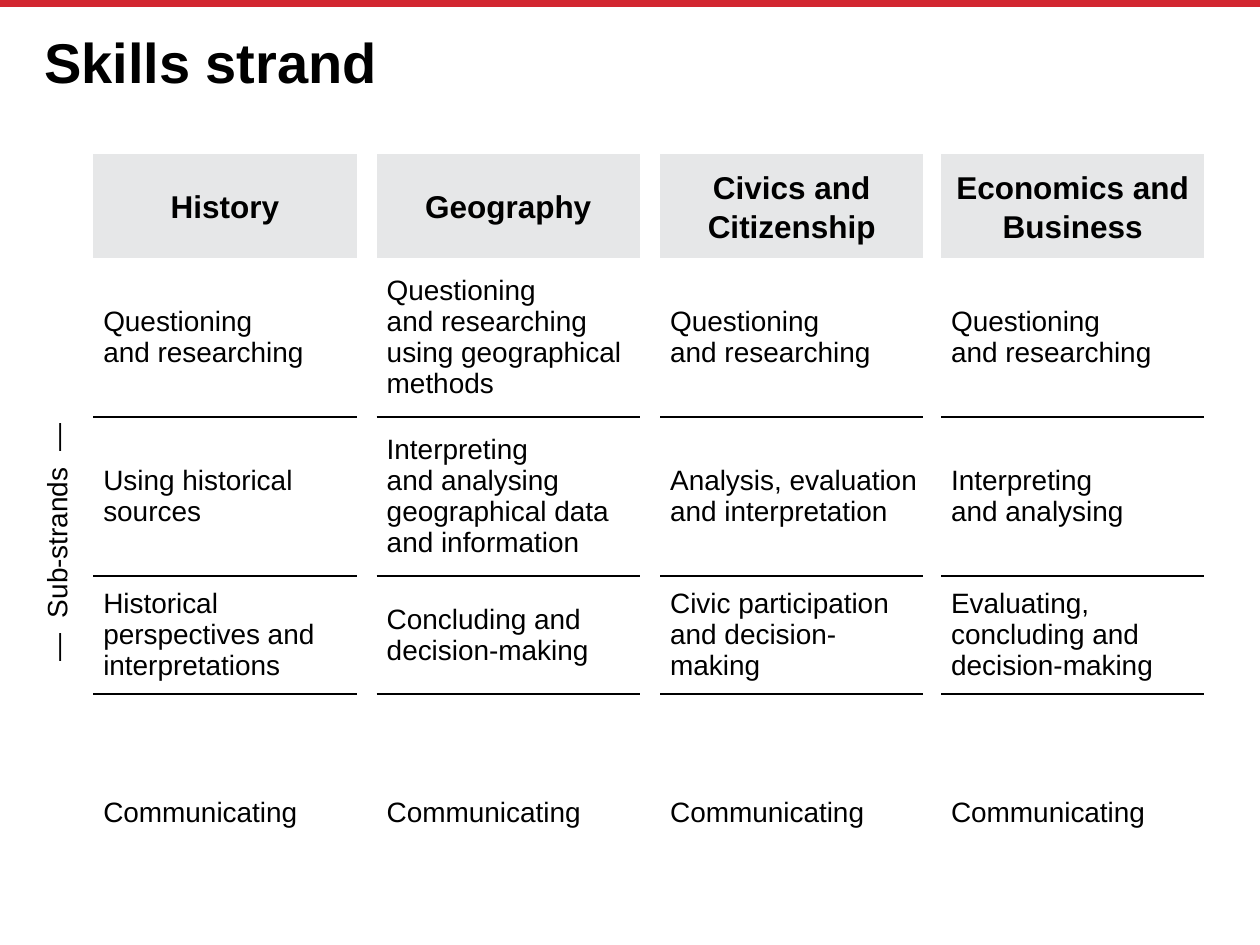
import dataclasses

import lxml.etree
import pptx
import pptx.dml.color
import pptx.enum.shapes
import pptx.enum.text
import pptx.oxml.ns
import pptx.util

Inches = pptx.util.Inches
Pt = pptx.util.Pt
qn = pptx.oxml.ns.qn
ALIGN = pptx.enum.text.PP_ALIGN
ANCHOR = pptx.enum.text.MSO_ANCHOR
NO_GRID = "{2D5ABB26-0587-4C30-8999-92F81FD0307C}"


@dataclasses.dataclass
class Theme:
    font: str = "Arial"
    ink: str = "000000"
    accent: str = "D22730"
    header_fill: str = "E6E7E8"
    title_size: int = 32
    header_size: int = 18
    body_size: int = 16


class SlideBuilder:
    def __init__(self, prs, theme):
        self.theme = theme
        self.s = prs.slides.add_slide(prs.slide_layouts[6])

    def color(self, value):
        return pptx.dml.color.RGBColor.from_string(value)

    def add_text(self, p, text, size, bold=False):
        for i, line in enumerate(text.split("\n")):
            if i:
                p.add_line_break()
            r = p.add_run()
            r.text = line
            r.font.name = self.theme.font
            r.font.size = Pt(size)
            r.font.bold = bold
            r.font.color.rgb = self.color(self.theme.ink)

    def rule(self, x1, y1, x2, y2, width):
        sp = self.s.shapes.add_connector(
            pptx.enum.shapes.MSO_CONNECTOR.STRAIGHT,
            Inches(x1), Inches(y1), Inches(x2), Inches(y2))
        sp.line.color.rgb = self.color(self.theme.accent)
        sp.line.width = Pt(width)
        lxml.etree.SubElement(sp._element.spPr, qn("a:effectLst"))

    def title(self, text, x, y, w, h):
        sp = self.s.shapes.add_textbox(Inches(x), Inches(y), Inches(w), Inches(h))
        tf = sp.text_frame
        tf.word_wrap = True
        tf.vertical_anchor = ANCHOR.MIDDLE
        tf.margin_left = tf.margin_right = tf.margin_top = tf.margin_bottom = 0
        p = tf.paragraphs[0]
        p.line_spacing = 0.9
        self.add_text(p, text, self.theme.title_size, bold=True)

    def table(self, x, y, widths, heights):
        frame = self.s.shapes.add_table(
            len(heights), len(widths), Inches(x), Inches(y),
            Inches(sum(widths)), Inches(sum(heights)))
        table = frame.table
        table.first_row = table.horz_banding = False
        table._tbl.tblPr.find(qn("a:tableStyleId")).text = NO_GRID
        for column, width in zip(table.columns, widths):
            column.width = Inches(width)
        for row, height in zip(table.rows, heights):
            row.height = Inches(height)
        for cell in table.iter_cells():
            cell.fill.background()
            cell.margin_left = cell.margin_right = 0
            cell.margin_top = cell.margin_bottom = 0
        return table

    def heading_cell(self, cell, text, size, bold=True):
        cell.vertical_anchor = ANCHOR.MIDDLE
        p = cell.text_frame.paragraphs[0]
        p.alignment = ALIGN.CENTER
        p.line_spacing = 1.1
        p.space_after = Pt(6)
        self.add_text(p, text, size, bold)

    def header_cell(self, cell, text):
        cell.fill.solid()
        cell.fill.fore_color.rgb = self.color(self.theme.header_fill)
        self.heading_cell(cell, text, self.theme.header_size)

    def side_label(self, cell, text):
        self.heading_cell(cell, text, self.theme.body_size, bold=False)
        cell.vertical_anchor = ANCHOR.TOP
        cell._tc.get_or_add_tcPr().set("vert", "vert270")

    def body_cell(self, cell, text, sides):
        cell.vertical_anchor = ANCHOR.MIDDLE
        cell.margin_left = Inches(0.08)
        self.add_text(cell.text_frame.paragraphs[0], text, self.theme.body_size)
        tcPr = cell._tc.get_or_add_tcPr()
        for i, side in enumerate(sides):
            ln = lxml.etree.Element(qn(f"a:ln{side}"), w=str(Pt(1)))
            fill = lxml.etree.SubElement(ln, qn("a:solidFill"))
            lxml.etree.SubElement(fill, qn("a:srgbClr"), val=self.theme.ink)
            tcPr.insert(i, ln)


SUBJECTS = {
    "History": [
        "Questioning\nand researching",
        "Using historical sources",
        "Historical perspectives and interpretations",
        "Communicating",
    ],
    "Geography": [
        "Questioning\nand researching using geographical methods",
        "Interpreting\nand analysing geographical data\nand information",
        "Concluding and decision-making",
        "Communicating",
    ],
    "Civics and Citizenship": [
        "Questioning\nand researching",
        "Analysis, evaluation and interpretation",
        "Civic participation and decision-making",
        "Communicating",
    ],
    "Economics and Business": [
        "Questioning\nand researching",
        "Interpreting\nand analysing",
        "Evaluating, concluding and decision-making",
        "Communicating",
    ],
}


def main():
    prs = pptx.Presentation()
    prs.slide_width = Inches(10)
    prs.slide_height = Inches(7.5)
    slide = SlideBuilder(prs, Theme())

    slide.rule(0, 0.03, 10, 0.03, 4.2)
    slide.title("Skills strand", 0.35, 0.28, 9.29, 0.48)

    widths = [0.43, 2.09, 0.16, 2.09, 0.16, 2.09, 0.14, 2.09]
    heights = [0.83, 1.26, 1.26, 0.94, 0.94]
    table = slide.table(0.31, 1.22, widths, heights)
    table.cell(0, 0).merge(table.cell(len(heights) - 1, 0))
    slide.side_label(table.cell(0, 0), "—  Sub-strands  —")

    for i, (subject, strands) in enumerate(SUBJECTS.items()):
        col = 2 * i + 1
        slide.header_cell(table.cell(0, col), subject)
        for row, strand in enumerate(strands, start=1):
            sides = ("T" if row > 1 else "") + ("B" if row < len(strands) else "")
            slide.body_cell(table.cell(row, col), strand, sides)

    prs.save("out.pptx")


if __name__ == "__main__":
    main()
